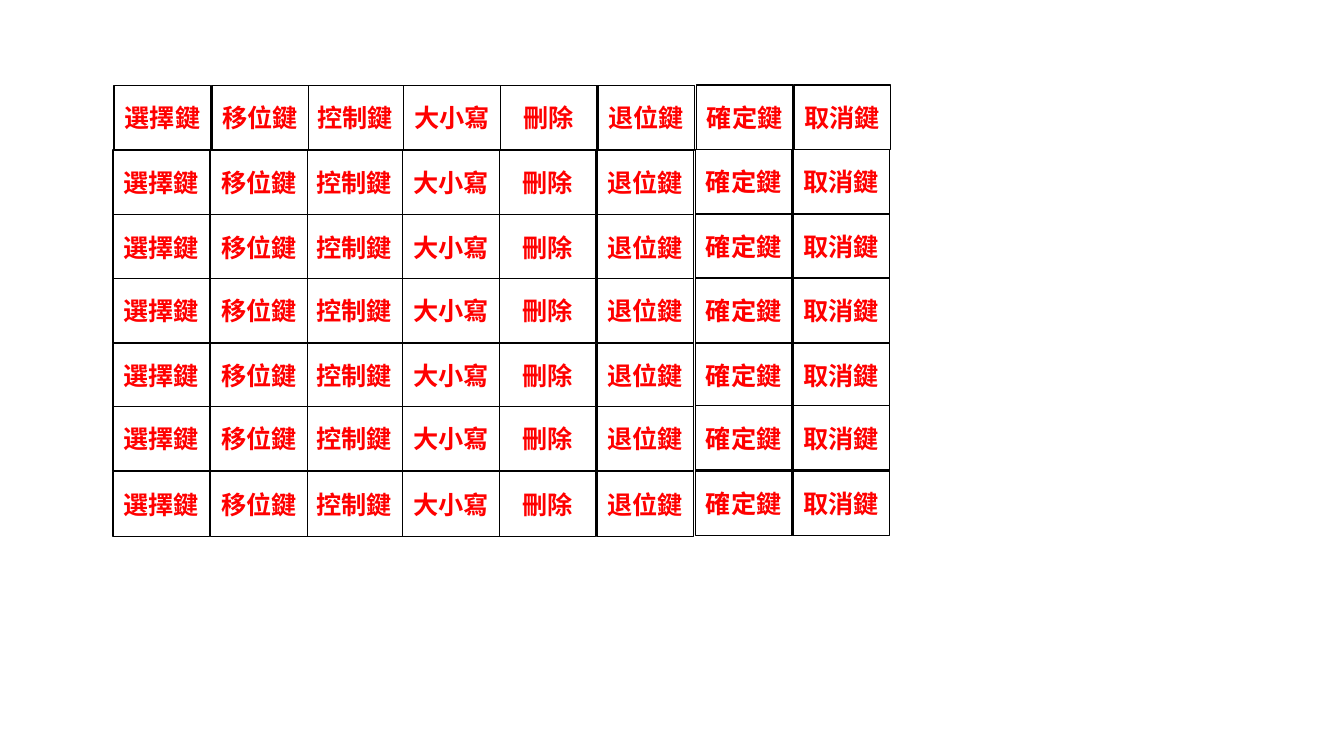
from dataclasses import dataclass

from lxml.etree import SubElement
from pptx import Presentation
from pptx.dml.color import RGBColor
from pptx.enum.shapes import MSO_SHAPE
from pptx.enum.text import MSO_ANCHOR, PP_ALIGN
from pptx.oxml.ns import qn
from pptx.slide import Slide
from pptx.util import Pt

RED = RGBColor(0xFF, 0x00, 0x00)
BLACK = RGBColor(0x00, 0x00, 0x00)
WHITE = RGBColor(0xFF, 0xFF, 0xFF)
FACE = "Noto Sans CJK SC"
FONT = {"size": Pt(18), "bold": True, "name": FACE}
WIDE, HIGH = 69.2, 46.1


@dataclass(frozen=True)
class Key:
    label: str
    left: float
    lift: float = 0


@dataclass(frozen=True)
class Row:
    top: float
    shift: float = 0


KEYS = [
    Key("退位鍵", 426.3),
    Key("確定鍵", 496.6, 0.5),
    Key("取消鍵", 566.3, 0.5),
    Key("刪除", 356.4),
    Key("控制鍵", 218.2),
    Key("移位鍵", 150.5),
    Key("選擇鍵", 80.6),
    Key("大小寫", 287.5),
]
ROWS = [
    Row(61.2, 0.8),
    Row(107.3),
    Row(153.4),
    Row(199),
    Row(245.4),
    Row(290.3),
    Row(337),
]


def draw_key(slide: Slide, key: Key, row: Row) -> None:
    box = slide.shapes.add_shape(
        MSO_SHAPE.RECTANGLE,
        Pt(key.left + row.shift),
        Pt(row.top - key.lift),
        Pt(WIDE),
        Pt(HIGH),
    )
    box.shadow.inherit = False
    box.fill.solid()
    box.fill.fore_color.rgb = WHITE
    box.line.color.rgb = BLACK
    box.line.width = Pt(1)
    frame = box.text_frame
    frame.word_wrap = True
    frame.vertical_anchor = MSO_ANCHOR.MIDDLE
    line = frame.paragraphs[0]
    line.alignment = PP_ALIGN.CENTER
    run = line.add_run()
    run.text = key.label
    run.font.color.rgb = RED
    for name, value in FONT.items():
        setattr(run.font, name, value)
    SubElement(run._r.get_or_add_rPr(), qn("a:ea"), typeface=FACE)


def main() -> None:
    deck = Presentation()
    deck.slide_width, deck.slide_height = Pt(960), Pt(540)
    slide = deck.slides.add_slide(deck.slide_layouts[6])
    for row in ROWS:
        for key in KEYS:
            draw_key(slide, key, row)
    deck.save("out.pptx")


if __name__ == "__main__":
    main()
